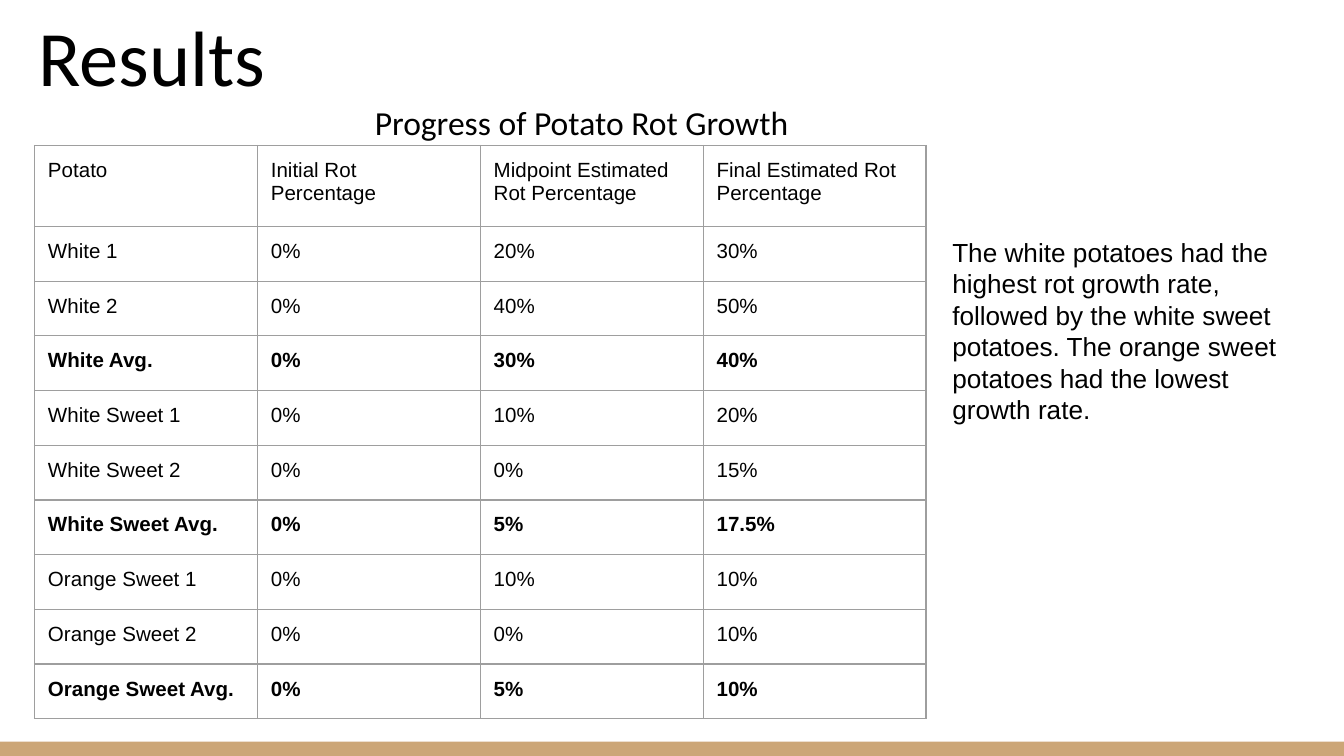
import pptx
import pptx.dml.color
import pptx.enum.shapes
import pptx.enum.text
import pptx.oxml
import pptx.oxml.ns
import pptx.util

Pt = pptx.util.Pt
COLORS = {"text": "000000", "band": "CCA677", "grid": "9E9E9E"}
INSETS = {side: Pt(7.2) for side in
          ("margin_left", "margin_top", "margin_right", "margin_bottom")}


def write(paragraph, text, size, font_name, bold=False):
    run = paragraph.add_run()
    run.text = text
    font = {"size": Pt(size), "name": font_name, "bold": bold}
    for attribute, value in font.items():
        setattr(run.font, attribute, value)
    run.font.color.rgb = pptx.dml.color.RGBColor.from_string(COLORS["text"])


def add_text_frame(left, top, width, height, anchor):
    box = slide.shapes.add_textbox(Pt(left), Pt(top), Pt(width), Pt(height))
    frame = box.text_frame
    settings = {**INSETS, "word_wrap": True, "vertical_anchor": anchor}
    for attribute, value in settings.items():
        setattr(frame, attribute, value)
    return frame


deck = pptx.Presentation()
deck.slide_width, deck.slide_height = Pt(720), Pt(405)
slide = deck.slides.add_slide(deck.slide_layouts[6])

# Band along the bottom edge
band = slide.shapes.add_shape(pptx.enum.shapes.MSO_SHAPE.RECTANGLE,
                              Pt(0), Pt(397.4), Pt(720), Pt(7.6))
band.shadow.inherit = False
band.fill.solid()
band.fill.fore_color.rgb = pptx.dml.color.RGBColor.from_string(COLORS["band"])
band.line.fill.background()

# Title, with the table's caption as an indented second paragraph
heading = add_text_frame(13.7, 14.4, 671, 69.1, pptx.enum.text.MSO_ANCHOR.BOTTOM)
write(heading.paragraphs[0], "Results", 42, "Calibri")
caption = heading.add_paragraph()
write(caption, "Progress of Potato Rot Growth", 18, "Calibri")
caption_format = caption._p.get_or_add_pPr()
caption_format.set("marL", str(Pt(144)))
caption_format.set("indent", str(Pt(36)))

# Rot percentages; the average rows are bold
rot_rows = [
    ("Potato", "Initial Rot Percentage", "Midpoint Estimated Rot Percentage",
     "Final Estimated Rot Percentage"),
    ("White 1", "0%", "20%", "30%"),
    ("White 2", "0%", "40%", "50%"),
    ("White Avg.", "0%", "30%", "40%"),
    ("White Sweet 1", "0%", "10%", "20%"),
    ("White Sweet 2", "0%", "0%", "15%"),
    ("White Sweet Avg.", "0%", "5%", "17.5%"),
    ("Orange Sweet 1", "0%", "10%", "10%"),
    ("Orange Sweet 2", "0%", "0%", "10%"),
    ("Orange Sweet Avg.", "0%", "5%", "10%"),
]
column_width, header_height, row_height = 119.4, 43.4, 29.33
rot_table = slide.shapes.add_table(
    len(rot_rows), 4, Pt(18.5), Pt(77.9), Pt(4 * column_width),
    Pt(header_height + 9 * row_height)).table
rot_table.first_row = False
rot_table.horz_banding = False
for column in rot_table.columns:
    column.width = Pt(column_width)

for row_index, values in enumerate(rot_rows):
    rot_table.rows[row_index].height = Pt(row_height if row_index else header_height)
    for column_index, value in enumerate(values):
        cell = rot_table.cell(row_index, column_index)
        for attribute, inset in INSETS.items():
            setattr(cell, attribute, inset)
        for side in "LRTB":
            cell._tc.get_or_add_tcPr().append(pptx.oxml.parse_xml(
                f'<a:ln{side} {pptx.oxml.ns.nsdecls("a")} w="{Pt(0.75)}"><a:solidFill>'
                f'<a:srgbClr val="{COLORS["grid"]}"/></a:solidFill></a:ln{side}>'))
        cell.fill.background()
        write(cell.text_frame.paragraphs[0], value, 11, "Arial",
              bold=values[0].endswith("Avg."))

# Conclusion beside the table
conclusion = add_text_frame(503.1, 119.5, 194.4, 153.4, pptx.enum.text.MSO_ANCHOR.TOP)
write(conclusion.paragraphs[0],
      "The white potatoes had the highest rot growth rate, followed by the white "
      "sweet potatoes. The orange sweet potatoes had the lowest growth rate.",
      14, "Arial")

deck.save("out.pptx")
